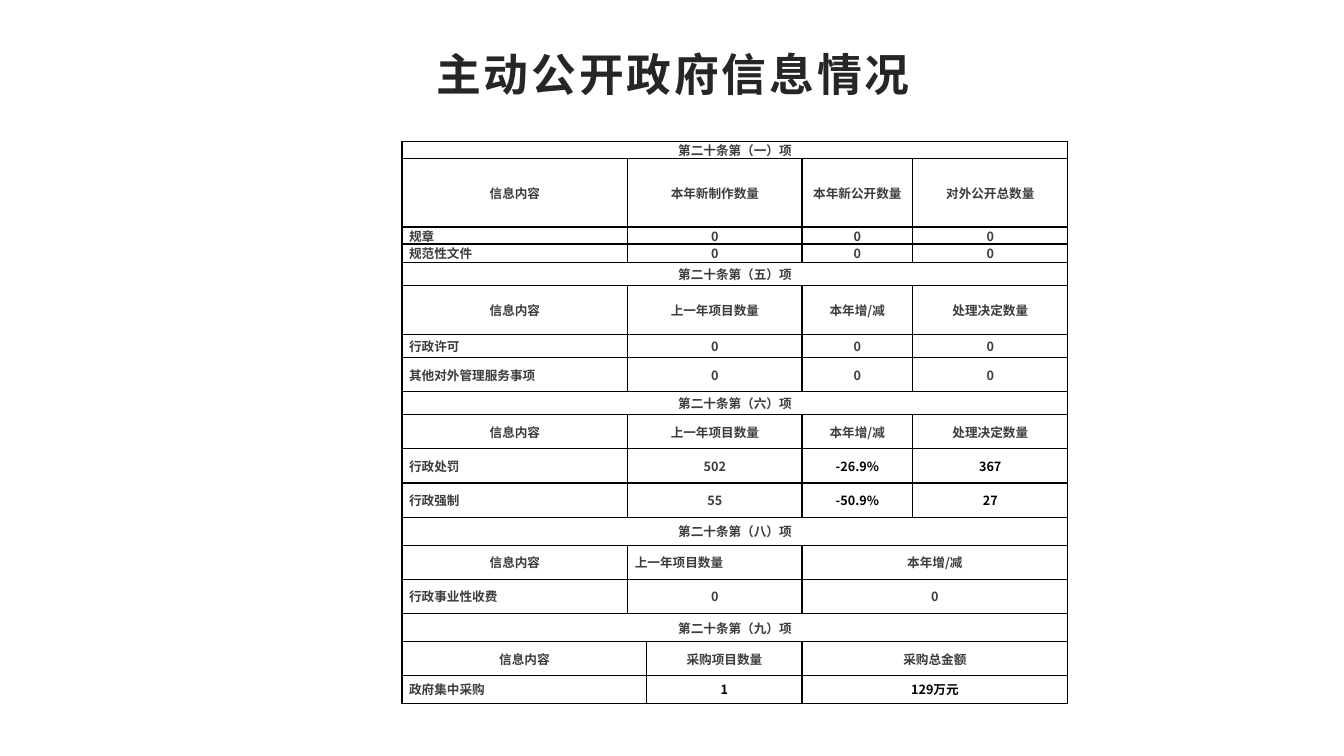
from lxml import etree
from pptx import Presentation
from pptx.dml import color
from pptx.enum import text
from pptx.oxml import ns
from pptx.util import Cm, Pt

INK, BLACK, WHITE = "3D3D3D", "000000", "FFFFFF"
TABLE_FONT = "Noto Sans CJK SC"
COLUMN_WIDTHS = [5.69, 0.48, 3.91, 2.79, 3.91]
ROW_HEIGHTS = [0.43, 1.73, 0.43, 0.46, 0.58, 1.24, 0.58, 0.86, 0.58,
               0.86, 0.86, 0.86, 0.71, 0.86, 0.86, 0.71, 0.86, 0.69]
CHANGE_HEADINGS = ["信息内容", "上一年项目数量", "本年增/减", "处理决定数量"]
SECTIONS = [
    ("一", [1, 2, 1, 1], ["信息内容", "本年新制作数量", "本年新公开数量", "对外公开总数量"],
     [["规章", "0", "0", "0"], ["规范性文件", "0", "0", "0"]]),
    ("五", [1, 2, 1, 1], CHANGE_HEADINGS,
     [["行政许可", "0", "0", "0"], ["其他对外管理服务事项", "0", "0", "0"]]),
    ("六", [1, 2, 1, 1], CHANGE_HEADINGS,
     [["行政处罚", "502", "-26.9%", "367"], ["行政强制", "55", "-50.9%", "27"]]),
    ("八", [1, 2, 2], CHANGE_HEADINGS[:3], [["行政事业性收费", "0", "0"]]),
    ("九", [2, 1, 2], ["信息内容", "采购项目数量", "采购总金额"],
     [["政府集中采购", "1", "129万元"]]),
]
BLACK_VALUES = {"-26.9%", "367", "-50.9%", "27", "1", "129万元"}


def rgb(value):
    return color.RGBColor.from_string(value)


def apply(target, values):
    for name, value in values.items():
        setattr(target, name, value)


def write(para, words, font_name, size, ink, align):
    para.alignment = align
    span = para.add_run()
    span.text = words
    apply(span.font, {"name": font_name, "size": Pt(size), "bold": True,
                      "language_id": None})
    span.font.color.rgb = rgb(ink)
    properties = span.font._element
    properties.set("lang", "zh-CN")
    etree.SubElement(properties, ns.qn("a:ea"), typeface=font_name)
    return span


def add_title(page, words):
    box = page.shapes.add_textbox(Cm(1.85), Cm(1.22), Cm(30.15), Cm(1.22))
    frame = box.text_frame
    apply(frame, {"word_wrap": True, "vertical_anchor": text.MSO_ANCHOR.TOP,
                  "margin_left": Cm(0.28), "margin_right": Cm(0.2),
                  "margin_top": Cm(0.1), "margin_bottom": Cm(0.1)})
    para = frame.paragraphs[0]
    para.line_spacing = 0.9
    span = write(para, words, "Arial", 32, "262626", text.PP_ALIGN.CENTER)
    span.font._element.set("spc", "200")


def add_borders(cell):
    properties = cell._tc.get_or_add_tcPr()
    for position, side in enumerate(("lnL", "lnR", "lnT", "lnB")):
        line = etree.Element(ns.qn(f"a:{side}"), w=str(Pt(1)))
        fill = etree.SubElement(line, ns.qn("a:solidFill"))
        etree.SubElement(fill, ns.qn("a:srgbClr"), val="080000")
        properties.insert(position, line)


def fill_cell(cell, words, align):
    apply(cell, {"vertical_anchor": text.MSO_ANCHOR.MIDDLE,
                 "margin_left": Cm(0.18), "margin_right": Cm(0.18),
                 "margin_top": 0, "margin_bottom": 0})
    ink = BLACK if words in BLACK_VALUES else INK
    write(cell.text_frame.paragraphs[0], words, TABLE_FONT, 9, ink, align)


def table_rows():
    center, left = text.PP_ALIGN.CENTER, text.PP_ALIGN.LEFT
    for numeral, spans, headings, records in SECTIONS:
        yield [5], [f"第二十条第（{numeral}）项"], [center]
        aligns = [center] * len(spans)
        if numeral == "八":
            aligns[1] = left
        yield spans, headings, aligns
        for record in records:
            yield spans, record, [left] + [center] * (len(spans) - 1)


def add_disclosure_table(page):
    frame = page.shapes.add_table(len(ROW_HEIGHTS), len(COLUMN_WIDTHS), Cm(10.13), Cm(3.56),
                                  Cm(sum(COLUMN_WIDTHS)), Cm(sum(ROW_HEIGHTS)))
    table = frame.table
    apply(table, {"first_row": False, "horz_banding": False})
    for column, width in zip(table.columns, COLUMN_WIDTHS):
        column.width = Cm(width)
    for row, height in zip(table.rows, ROW_HEIGHTS):
        row.height = Cm(height)
    for cell in table.iter_cells():
        cell.fill.solid()
        cell.fill.fore_color.rgb = rgb(WHITE)
        add_borders(cell)
    for row, (spans, entries, aligns) in enumerate(table_rows()):
        column = 0
        for width, words, align in zip(spans, entries, aligns):
            cell = table.cell(row, column)
            if width > 1:
                cell.merge(table.cell(row, column + width - 1))
            fill_cell(cell, words, align)
            column += width


def main():
    deck = Presentation()
    apply(deck, {"slide_width": Cm(33.87), "slide_height": Cm(19.05)})
    page = deck.slides.add_slide(deck.slide_layouts[6])
    add_title(page, "主动公开政府信息情况")
    add_disclosure_table(page)
    deck.save("out.pptx")


if __name__ == "__main__":
    main()
